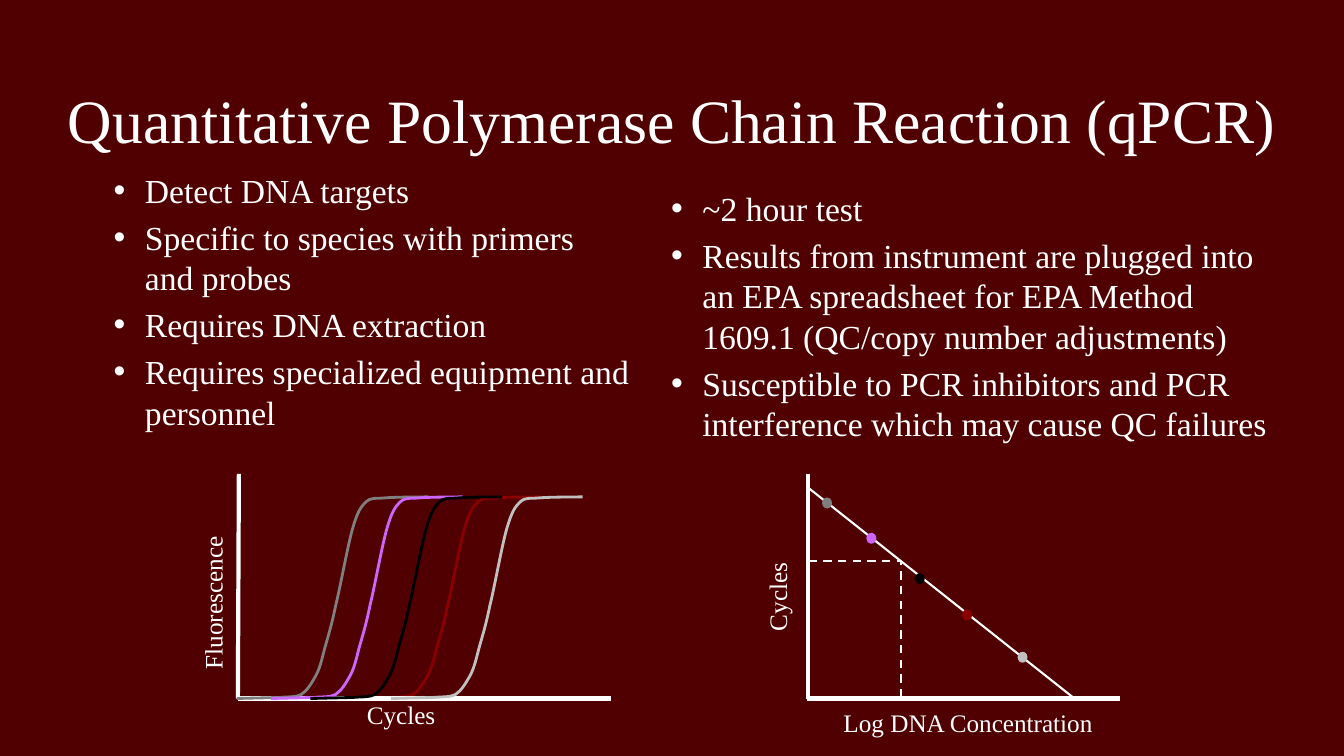
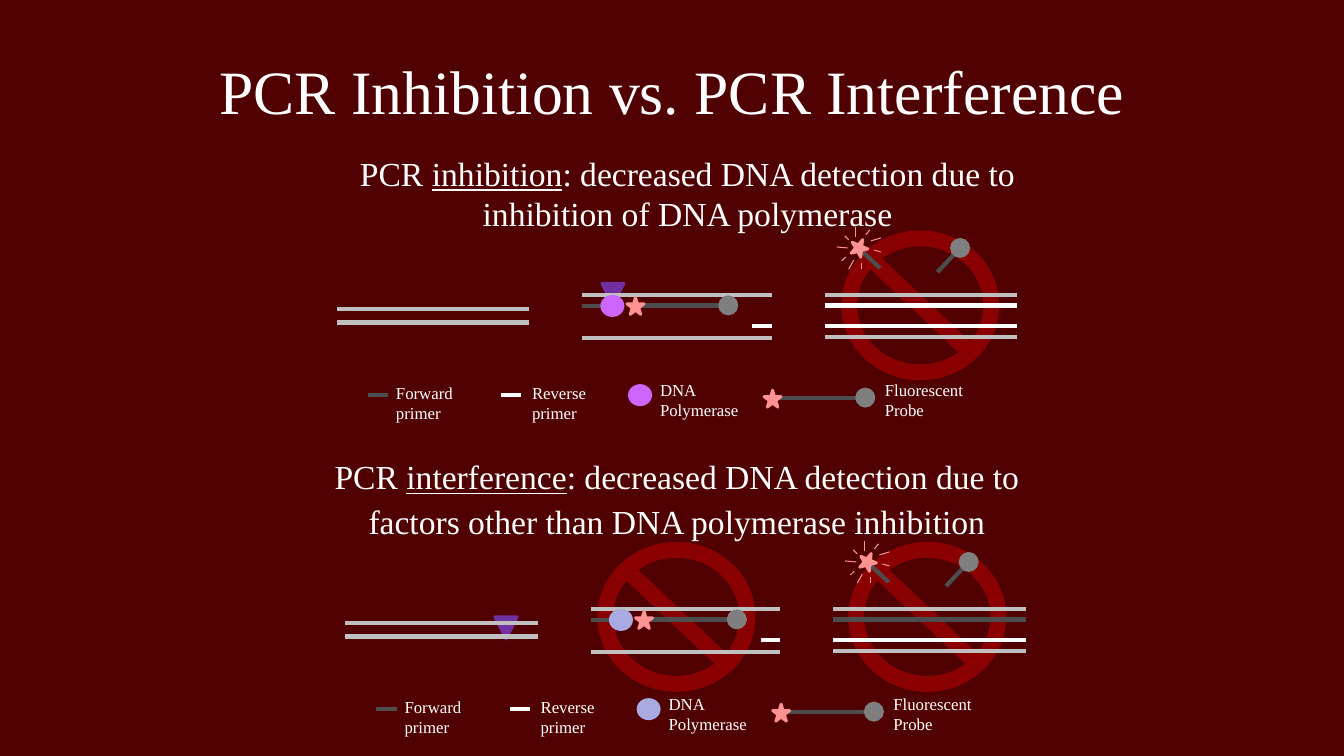
import lxml.etree
import pptx
import pptx.dml.color
import pptx.enum.dml
import pptx.enum.shapes
import pptx.enum.text
import pptx.oxml.ns
import pptx.util

COLUMNS, ROWS = 1333.33, 750
FONT = "Times New Roman"
MAROON, WHITE, SILVER, GREY, DARK_GREY = "500000", "FFFFFF", "C0C0C0", "7F7F7F", "4D4D4D"
RED, PURPLE, VIOLET, LAVENDER, PINK, BLACK = "8A0000", "CC66FF", "7030A0", "AAAAE2", "FF9393", "000000"

SHAPES = pptx.enum.shapes.MSO_SHAPE
CENTER = pptx.enum.text.PP_ALIGN.CENTER
MIDDLE = pptx.enum.text.MSO_ANCHOR.MIDDLE


def color(value):
    return pptx.dml.color.RGBColor.from_string(value)


def add_xml(parent, tag, **attributes):
    return lxml.etree.SubElement(parent, pptx.oxml.ns.qn(tag), attributes)


class Deck:
    """Holds the shared style and the current slide, and draws on a grid of columns and rows."""

    def __init__(self):
        self.presentation = pptx.Presentation()
        self.presentation.slide_width = pptx.util.Emu(12192000)
        self.presentation.slide_height = pptx.util.Inches(7.5)
        self.slide = None

    def emu(self, column, row):
        return (
            round(column * self.presentation.slide_width / COLUMNS),
            round(row * self.presentation.slide_height / ROWS),
        )

    def box(self, left, top, width, height):
        return *self.emu(left, top), *self.emu(width, height)

    def new_slide(self):
        self.slide = self.presentation.slides.add_slide(self.presentation.slide_layouts[6])
        fill = self.slide.background.fill
        fill.solid()
        fill.fore_color.rgb = color(MAROON)

    def text(self, box, *paragraphs, size=12, align=None, anchor=None, bullet=False,
             vertical=False, before=0, after=0, spacing=None):
        shape = self.slide.shapes.add_textbox(*self.box(*box))
        frame = shape.text_frame
        frame.word_wrap = True
        if anchor is not None:
            frame.vertical_anchor = anchor
        if vertical:
            frame._txBody.bodyPr.set("vert", "vert270")
        for index, content in enumerate(paragraphs):
            paragraph = frame.add_paragraph() if index else frame.paragraphs[0]
            paragraph.alignment = align
            paragraph.space_before = pptx.util.Pt(before)
            paragraph.space_after = pptx.util.Pt(after)
            paragraph.line_spacing = spacing
            if bullet:
                self.bullet(paragraph)
            for position, piece in enumerate(content.split("_")):
                run = paragraph.add_run()
                run.text = piece
                run.font.name = FONT
                run.font.size = pptx.util.Pt(size)
                run.font.color.rgb = color(WHITE)
                if position % 2:
                    run.font.underline = True

    def bullet(self, paragraph):
        properties = paragraph._p.get_or_add_pPr()
        properties.set("marL", str(pptx.util.Inches(0.81)))
        properties.set("indent", str(pptx.util.Inches(-0.31)))
        add_xml(properties, "a:buFont", typeface="Arial")
        add_xml(properties, "a:buChar", char="•")

    def title(self, box, content):
        self.text(box, content, size=44, align=CENTER)

    def bullets(self, box, *items):
        self.text(box, *items, size=24, bullet=True, before=4.8)

    def stroke(self, line, value, width):
        line.color.rgb = color(value)
        line.width = pptx.util.Pt(width)

    def line(self, x1, y1, x2, y2, value=WHITE, width=3, dashed=False):
        connector = self.slide.shapes.add_connector(
            pptx.enum.shapes.MSO_CONNECTOR.STRAIGHT, *self.emu(x1, y1), *self.emu(x2, y2))
        self.stroke(connector.line, value, width)
        if dashed:
            connector.line.dash_style = pptx.enum.dml.MSO_LINE.DASH
        add_xml(connector._element.spPr, "a:effectLst")

    def shape(self, kind, box, value, rotation=0):
        shape = self.slide.shapes.add_shape(kind, *self.box(*box))
        shape.shadow.inherit = False
        shape.fill.solid()
        shape.fill.fore_color.rgb = color(value)
        shape.rotation = rotation
        self.stroke(shape.line, value, 2)
        return shape

    def no_sign(self, left, top):
        self.shape(SHAPES.NO_SYMBOL, (left, top, 154, 146), RED).adjustments[0] = 0.089

    def star(self, left, top, rotation=0):
        self.shape(SHAPES.STAR_5_POINT, (left, top, 17, 17), PINK, rotation)

    def quencher(self, left, top):
        self.shape(SHAPES.OVAL, (left, top, 17, 17), GREY)

    def polymerase(self, left, top, value):
        self.shape(SHAPES.OVAL, (left, top, 21, 19), value)

    def curve(self, points, value):
        start, *rest = [self.emu(*point) for point in points]
        builder = self.slide.shapes.build_freeform(*start)
        builder.add_line_segments(rest, close=False)
        shape = builder.convert_to_shape()
        shape.shadow.inherit = False
        shape.fill.background()
        self.stroke(shape.line, value, 2)
        segments = list(shape._element.iter(pptx.oxml.ns.qn("a:lnTo")))[1:]
        for index in range(0, len(segments), 3):
            bend = add_xml(segments[index].getparent(), "a:cubicBezTo")
            for segment in segments[index:index + 3]:
                bend.append(segment[0])
                segment.getparent().remove(segment)


SERIES = [
    (RED, 346, 956, 606),
    (GREY, 235, 817, 495),
    (PURPLE, 269, 861, 530),
    (BLACK, 308, 909, 570),
    (SILVER, 388, 1011, 648),
]
CURVE_START = [(0, 693), (42, 692)]
CURVE_BENDS = [
    (53, 691), (58, 692), (64, 689),
    (70, 685), (74, 678), (78, 671),
    (82, 664), (84, 656), (87, 644),
    (90, 633), (94, 621), (98, 601),
    (103, 581), (110, 541), (115, 524),
    (120, 507), (123, 503), (128, 498),
    (134, 493), (137, 495), (147, 494),
    (158, 493), (190, 493), (190, 493),
]
RAYS = [
    (859, 233, 863, 228), (867, 248, 874, 250), (855, 267, 855, 261),
    (835, 259, 839, 255), (838, 234, 842, 238), (849, 225, 849, 235),
    (874, 236, 864, 239), (847, 258, 842, 267), (841, 246, 830, 245),
]


def qpcr_slide(deck):
    deck.new_slide()
    for value, offset, _, _ in SERIES:
        deck.curve([(offset + x, y) for x, y in CURVE_START + CURVE_BENDS], value)
        if value == RED:
            deck.line(237, 470, 236, 693)
            deck.line(606, 693, 236, 693)
    deck.text((354, 689, 98, 40), "Cycles", size=18)
    deck.text((191, 474, 50, 200), "Fluorescence", size=18, vertical=True)

    deck.line(1111, 693, 801, 693)
    deck.line(802, 470, 802, 693)
    deck.line(802, 484, 1066, 693, width=1.5)
    for value, _, left, top in SERIES:
        deck.shape(SHAPES.OVAL, (left, top, 7, 8), value)
    deck.line(802, 557, 894, 557, width=1.5, dashed=True)
    deck.line(894, 692, 894, 557, width=1.5, dashed=True)
    deck.text((751, 541, 50, 95), "Cycles", size=18, vertical=True)
    deck.text((827, 697, 310, 40), "Log DNA Concentration", size=18)

    deck.bullets(
        (606, 181.5, 662, 287),
        "~2 hour test",
        "Results from instrument are plugged into an EPA spreadsheet for EPA Method 1609.1 "
        "(QC/copy number adjustments)",
        "Susceptible to PCR inhibitors and PCR interference which may cause QC failures",
    )
    deck.bullets(
        (53, 163.5, 582, 287),
        "Detect DNA targets",
        "Specific to species with primers and probes",
        "Requires DNA extraction",
        "Requires specialized equipment and personnel",
    )
    deck.title((53, 76.5, 1228, 130), "Quantitative Polymerase Chain Reaction (qPCR)")


def pcr_diagram(deck, dx, dy, polymerase, new_strand, signs, inhibitor):
    def line(x1, y1, x2, y2, value=WHITE, width=3):
        deck.line(x1 + dx, y1 + dy, x2 + dx, y2 + dy, value, width)

    for sign in signs:
        deck.no_sign(*sign)
    deck.shape(SHAPES.ISOSCELES_TRIANGLE, (*inhibitor, 22, 22), VIOLET, 180)

    for left, right, rows in ((334, 525, (306.5, 320)), (577.5, 765.5, (293, 335)), (818, 1009, (293, 334))):
        for row in rows:
            line(left, row, right, row, SILVER)

    line(577.5, 303.5, 597, 303.5, DARK_GREY)
    line(746, 323.5, 765.5, 323.5)
    deck.polymerase(597 + dx, 294 + dy, polymerase)
    line(637, 303, 723, 303, DARK_GREY)
    deck.star(622 + dx, 295 + dy)
    deck.quencher(714 + dx, 294.5 + dy)

    line(818, 303, 1009, 303, new_strand)
    line(818, 323.5, 1009, 323.5)
    line(946, 253, 930, 270, DARK_GREY)
    deck.quencher(944 + dx, 237.5 + dy)
    line(856, 250, 873, 266, DARK_GREY)
    deck.star(844 + dx, 237 + dy, 23)
    for ray in RAYS:
        line(*ray, PINK, 0.75)

    line(365, 392, 385, 392, DARK_GREY)
    line(497, 392, 517, 392)
    deck.polymerase(624.5 + dx, 382.5 + dy, polymerase)
    line(773, 394.5, 858, 394.5, DARK_GREY)
    deck.star(758 + dx, 387 + dy)
    deck.quencher(850 + dx, 386 + dy)
    for left, top, width, label in (
        (383, 375, 93, "Forward primer"),
        (518, 375, 93, "Reverse primer"),
        (645, 372, 107, "DNA Polymerase"),
        (868, 372, 120, "Fluorescent Probe"),
    ):
        deck.text((left + dx, top + dy, width, 50), label)


def inhibition_slide(deck):
    deck.new_slide()
    pcr_diagram(deck, 8.5, 311.5, LAVENDER, DARK_GREY, [(843, 539), (594, 539)], (491, 612))
    pcr_diagram(deck, 0, 0, PURPLE, WHITE, [(836, 230)], (597, 281))
    deck.text(
        (277, 434, 789, 117),
        "PCR _interference_: decreased DNA detection due to factors other than DNA polymerase inhibition",
        size=24, align=CENTER, anchor=MIDDLE, before=4.8, after=6, spacing=1.1,
    )
    deck.text(
        (287.5, 146.5, 789, 76),
        "PCR _inhibition_: decreased DNA detection due to inhibition of DNA polymerase",
        size=24, align=CENTER, before=4.8,
    )
    deck.title((64, 47.5, 1206, 80), "PCR Inhibition vs. PCR Interference")


def main():
    deck = Deck()
    qpcr_slide(deck)
    inhibition_slide(deck)
    deck.presentation.save("out.pptx")


if __name__ == "__main__":
    main()
